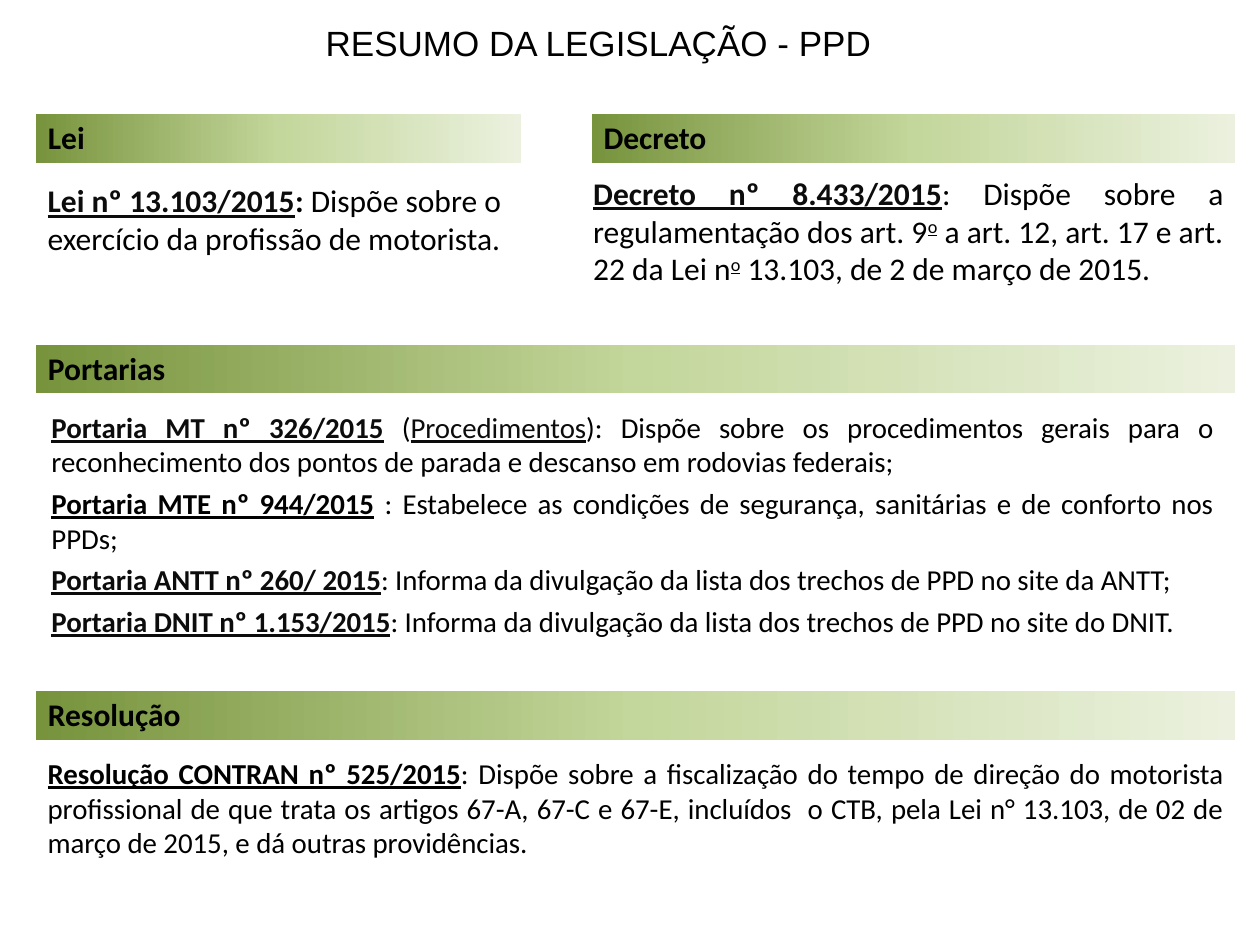
from lxml import etree
from pptx import Presentation
from pptx.dml.color import RGBColor
from pptx.enum.text import MSO_ANCHOR, MSO_AUTO_SIZE, PP_ALIGN
from pptx.oxml.ns import qn
from pptx.util import Inches, Pt

LEFT, CENTER, JUSTIFY = PP_ALIGN.LEFT, PP_ALIGN.CENTER, PP_ALIGN.JUSTIFY
TOP, MIDDLE = MSO_ANCHOR.TOP, MSO_ANCHOR.MIDDLE
GROW = MSO_AUTO_SIZE.SHAPE_TO_FIT_TEXT

COLORS = {
    "black": "000000",
    "ink": "0C0C0C",
    "white": "FFFFFF",
    "green": "77933C",
    "light green": "C3D69B",
    "pale green": "EBF1DE",
}
# Run styles: bold, underline, colour, baseline
STYLES = {
    "plain": (False, False, "black", 0),
    "bold": (True, False, "black", 0),
    "name": (True, True, "ink", 0),
    "black name": (True, True, "black", 0),
    "link": (False, True, "ink", 0),
    "ordinal": (False, True, "black", 30000),
}


def write_text(frame, paragraphs, size=18, font="Calibri", align=LEFT, gap=0):
    """Fill a text frame with paragraphs, each a list of (text, style) pairs."""
    for index, runs in enumerate(paragraphs):
        para = frame.paragraphs[0] if index == 0 else frame.add_paragraph()
        para.alignment = align
        if index:
            para.space_before = Pt(gap)
        for text, style in runs:
            bold, underline, color, baseline = STYLES[style]
            span = para.add_run()
            span.text = text
            span.font.name = font
            span.font.size = Pt(size)
            span.font.bold = bold
            span.font.underline = underline
            span.font.color.rgb = RGBColor.from_string(COLORS[color])
            if baseline:
                span._r.get_or_add_rPr().set("baseline", str(baseline))


def add_color(parent, color):
    etree.SubElement(parent, qn("a:srgbClr"), val=COLORS[color])


deck = Presentation()
deck.slide_width, deck.slide_height = Inches(10), Inches(7.5)
page = deck.slides.add_slide(deck.slide_layouts[6])

# Section headings: one-cell tables with a gradient fill
headings = [
    ("Lei", 0.28, 0.9, 3.86),
    ("Decreto", 4.69, 0.9, 5.12),
    ("Portarias", 0.28, 2.73, 9.53),
    ("Resolução", 0.28, 5.48, 9.53),
]
for title, left, top, width in headings:
    table = page.shapes.add_table(
        1, 1, Inches(left), Inches(top), Inches(width), Inches(0.41)).table
    table.first_row = table.horz_banding = False
    cell = table.cell(0, 0)
    write_text(cell.text_frame, [[(title, "bold")]])
    properties = cell._tc.get_or_add_tcPr()
    for side, points in (("L", 1), ("R", 1), ("T", 1), ("B", 3)):
        border = etree.SubElement(properties, qn(f"a:ln{side}"), w=str(Pt(points)))
        add_color(etree.SubElement(border, qn("a:solidFill")), "white")
    gradient = etree.SubElement(properties, qn("a:gradFill"), rotWithShape="1")
    stops = etree.SubElement(gradient, qn("a:gsLst"))
    for percent, color in ((0, "green"), (50, "light green"), (100, "pale green")):
        add_color(etree.SubElement(stops, qn("a:gs"), pos=str(percent * 1000)), color)
    etree.SubElement(gradient, qn("a:lin"), ang="0", scaled="0")

# Wording of each section
law = [[
    ("Lei nº 13.103/2015", "name"),
    (": ", "bold"),
    ("Dispõe sobre o exercício da profissão de motorista.", "plain"),
]]
decree = [[
    ("Decreto nº 8.433/2015", "name"),
    (": Dispõe sobre a regulamentação dos art. 9", "plain"),
    ("o", "ordinal"),
    (" a art. 12, art. 17 e art. 22 da Lei n", "plain"),
    ("o", "ordinal"),
    (" 13.103, de 2 de março de 2015.", "plain"),
]]
ordinances = [
    [("Portaria MT nº 326/2015", "name"),
     (" (", "plain"),
     ("Procedimentos", "link"),
     ("): Dispõe sobre os procedimentos gerais para o reconhecimento dos pontos "
      "de parada e descanso em rodovias federais;", "plain")],
    [("Portaria MTE nº 944/2015", "black name"),
     (" : Estabelece as condições de segurança, sanitárias e de conforto nos PPDs;",
      "plain")],
    [("Portaria ANTT nº 260/ 2015", "name"),
     (": Informa da divulgação da lista dos trechos de PPD no site da ANTT;", "plain")],
    [("Portaria DNIT nº 1.153/2015", "name"),
     (": Informa da divulgação da lista dos trechos de PPD no site do DNIT.", "plain")],
]
resolution = [[
    ("Resolução CONTRAN nº 525/2015", "black name"),
    (": Dispõe sobre a fiscalização do tempo de direção do motorista profissional "
     "de que trata os artigos 67-A, 67-C e 67-E, incluídos  o CTB, pela Lei "
     "n° 13.103, de 02 de março de 2015, e dá outras providências.", "plain"),
]]
heading = [[("RESUMO DA LEGISLAÇÃO - PPD", "plain")]]

# Title and body text boxes
boxes = [
    ((0, 0, 9.5, 0.68), heading, MIDDLE, dict(size=20, font="Arial", align=CENTER)),
    ((0.28, 1.39, 3.86, 0.71), law, TOP, dict()),
    ((4.61, 1.33, 5.2, 1.01), decree, TOP, dict(align=JUSTIFY)),
    ((0.31, 3.2, 9.42, 1.94), ordinances, TOP, dict(size=16.5, align=JUSTIFY, gap=4)),
    ((0.28, 5.95, 9.53, 0.93), resolution, TOP, dict(size=16.5, align=JUSTIFY)),
]
for place, paragraphs, anchor, text_format in boxes:
    box = page.shapes.add_textbox(*map(Inches, place))
    frame = box.text_frame
    frame.word_wrap = True
    frame.vertical_anchor = anchor
    if anchor == TOP:
        frame.auto_size = GROW
    write_text(frame, paragraphs, **text_format)

deck.save("out.pptx")
